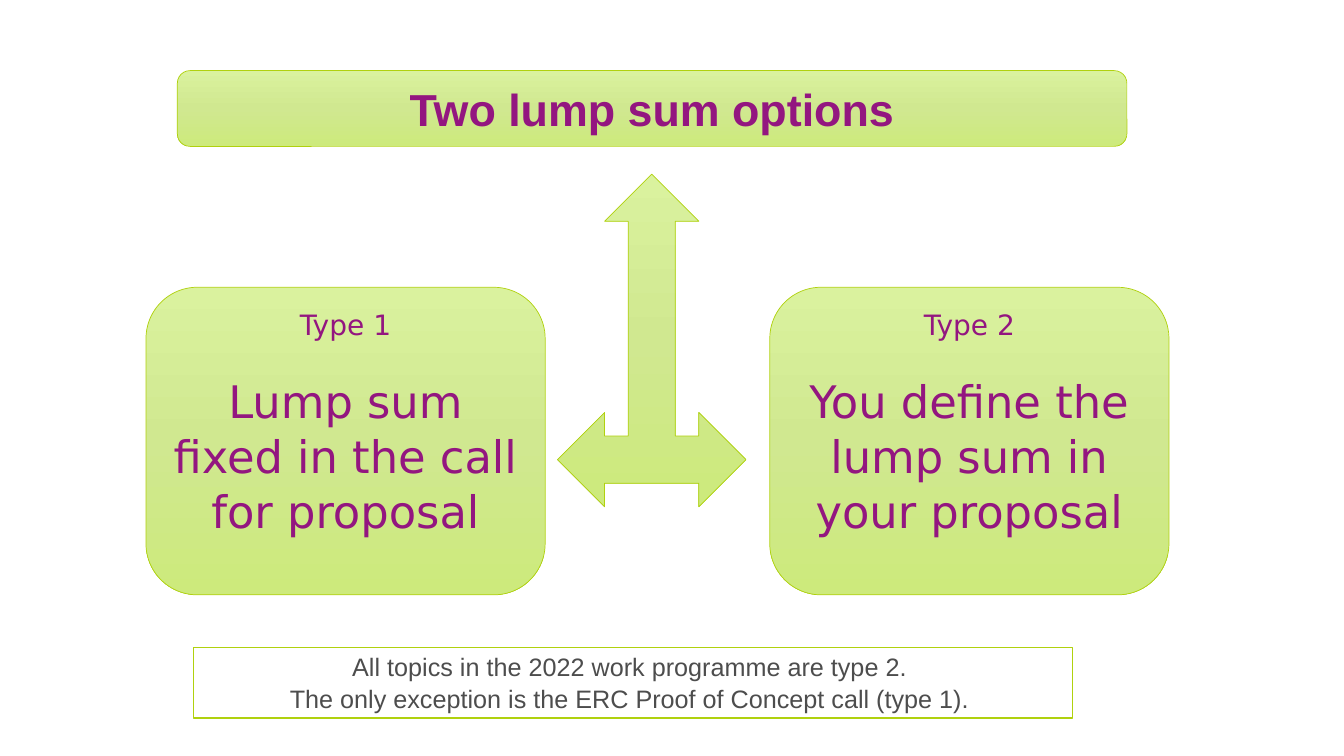
from copy import deepcopy

from pptx import Presentation
from pptx.dml.color import RGBColor
from pptx.enum.shapes import MSO_SHAPE
from pptx.enum.text import MSO_ANCHOR, PP_ALIGN
from pptx.util import Cm, Pt

# Content
TITLE = "Two lump sum options"
CARDS = [
    ("Type 1", "Lump sum fixed in the call for proposal"),
    ("Type 2", "You define the lump sum in your proposal"),
]
NOTE = [
    "All topics in the 2022 work programme are type 2.",
    "The only exception is the ERC Proof of Concept call (type 1).",
]

THEME = {
    "gradient": [(0, "DAF29E"), (0.5, "D0E890"), (1, "CDEA7C")],
    "outline": "B0D10E",
    "paper": "FFFFFF",
    "title": {"name": "Arial", "size": Pt(32), "bold": True, "color": "931680"},
    "label": {"name": "DejaVu Sans", "size": Pt(20), "color": "931680"},
    "option": {"name": "DejaVu Sans", "size": Pt(32), "color": "931680"},
    "note": {"name": "Arial", "size": Pt(18), "color": "4D4D4D"},
}

# Layout in cm
CARD_LEFT, CARD_STEP = 3.68, 15.72
CARD_TOP, CARD_W, CARD_H = 7.24, 10.06, 7.75


def fill_gradient(fill):
    fill.gradient()
    fill.gradient_angle = 270
    first, last = fill.gradient_stops
    first._gs.addnext(deepcopy(first._gs))
    for stop, (position, color) in zip(fill.gradient_stops, THEME["gradient"]):
        stop.position = position
        stop.color.rgb = RGBColor.from_string(color)


def add_box(s, kind, left, top, width, height, line=0.5, plain=False):
    sp = s.shapes.add_shape(kind, Cm(left), Cm(top), Cm(width), Cm(height))
    sp.shadow.inherit = False
    if plain:
        sp.fill.solid()
        sp.fill.fore_color.rgb = RGBColor.from_string(THEME["paper"])
    else:
        fill_gradient(sp.fill)
    sp.line.color.rgb = RGBColor.from_string(THEME["outline"])
    sp.line.width = Pt(line)
    return sp


def write(sp, lines, anchor=MSO_ANCHOR.MIDDLE):
    """Each line is text, style name, space before and line spacing."""
    tf = sp.text_frame
    tf.word_wrap = True
    tf.vertical_anchor = anchor
    for i, (text, style, before, spacing) in enumerate(lines):
        p = tf.add_paragraph() if i else tf.paragraphs[0]
        p.alignment = PP_ALIGN.CENTER
        p.space_before = Pt(before)
        p.line_spacing = spacing
        r = p.add_run()
        r.text = text
        for key, value in THEME[style].items():
            if key == "color":
                r.font.color.rgb = RGBColor.from_string(value)
            else:
                setattr(r.font, key, value)


def main():
    prs = Presentation()
    prs.slide_width, prs.slide_height = Cm(33.87), Cm(19.05)
    s = prs.slides.add_slide(prs.slide_layouts[6])

    # Three-way arrow
    add_box(s, MSO_SHAPE.LEFT_RIGHT_UP_ARROW, 14.05, 4.39, 4.75, 8.38)

    # Title bar
    bar = add_box(s, MSO_SHAPE.ROUNDED_RECTANGLE, 4.47, 1.78, 23.93, 1.91)
    write(bar, [(TITLE, "title", 0, 1.0)])

    # Option cards
    for i, (label, option) in enumerate(CARDS):
        card = add_box(s, MSO_SHAPE.ROUNDED_RECTANGLE,
                       CARD_LEFT + i * CARD_STEP, CARD_TOP, CARD_W, CARD_H)
        write(card, [(label, "label", 0, 1.0), (option, "option", 22, 1.03)],
              MSO_ANCHOR.TOP)

    # Note
    note = add_box(s, MSO_SHAPE.RECTANGLE, 4.88, 16.31, 22.15, 1.78, 1, plain=True)
    note.text_frame.margin_right = Cm(0.43)
    write(note, [(text, "note", 1.5 * i, 1.0) for i, text in enumerate(NOTE)])

    prs.save("out.pptx")


if __name__ == "__main__":
    main()
